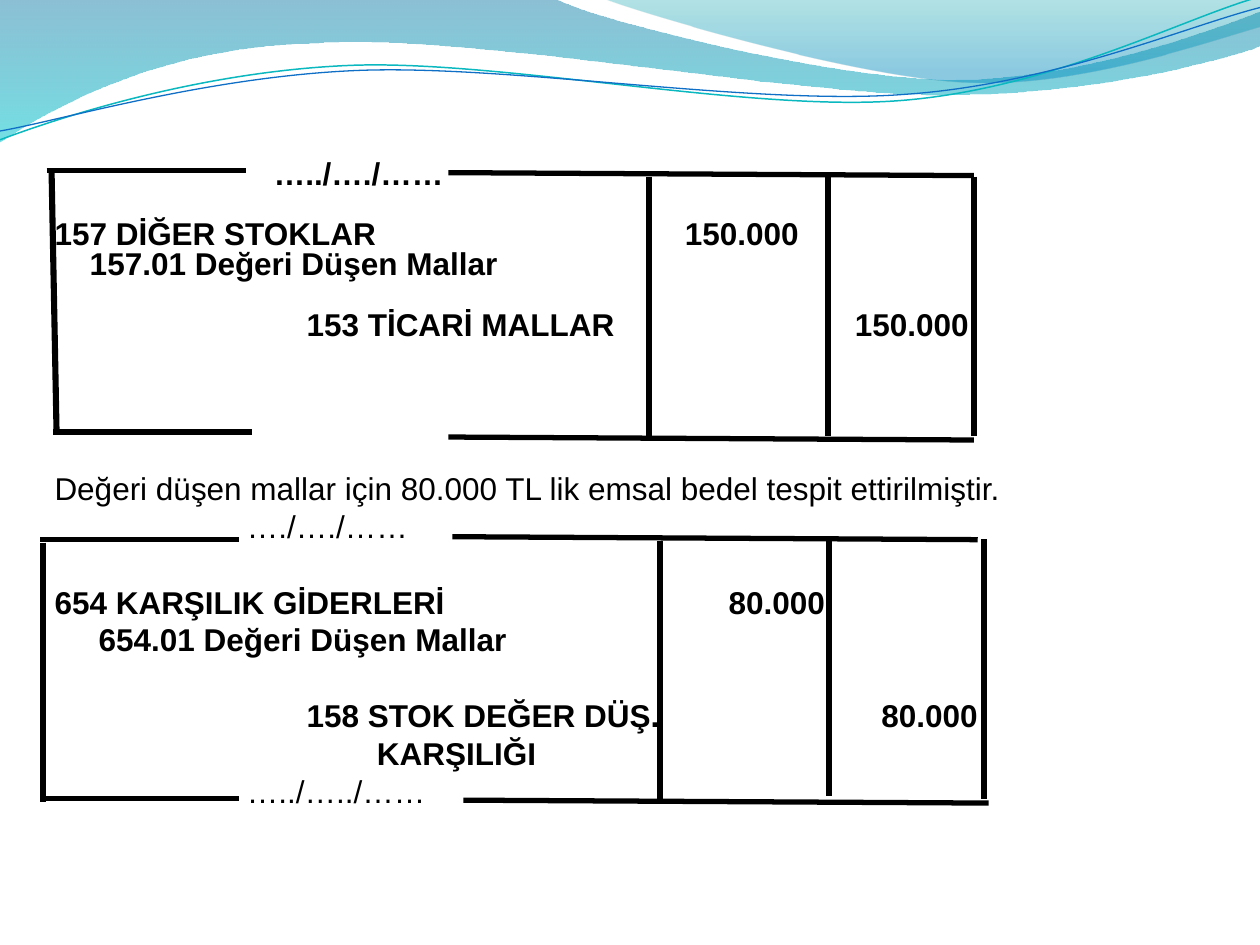
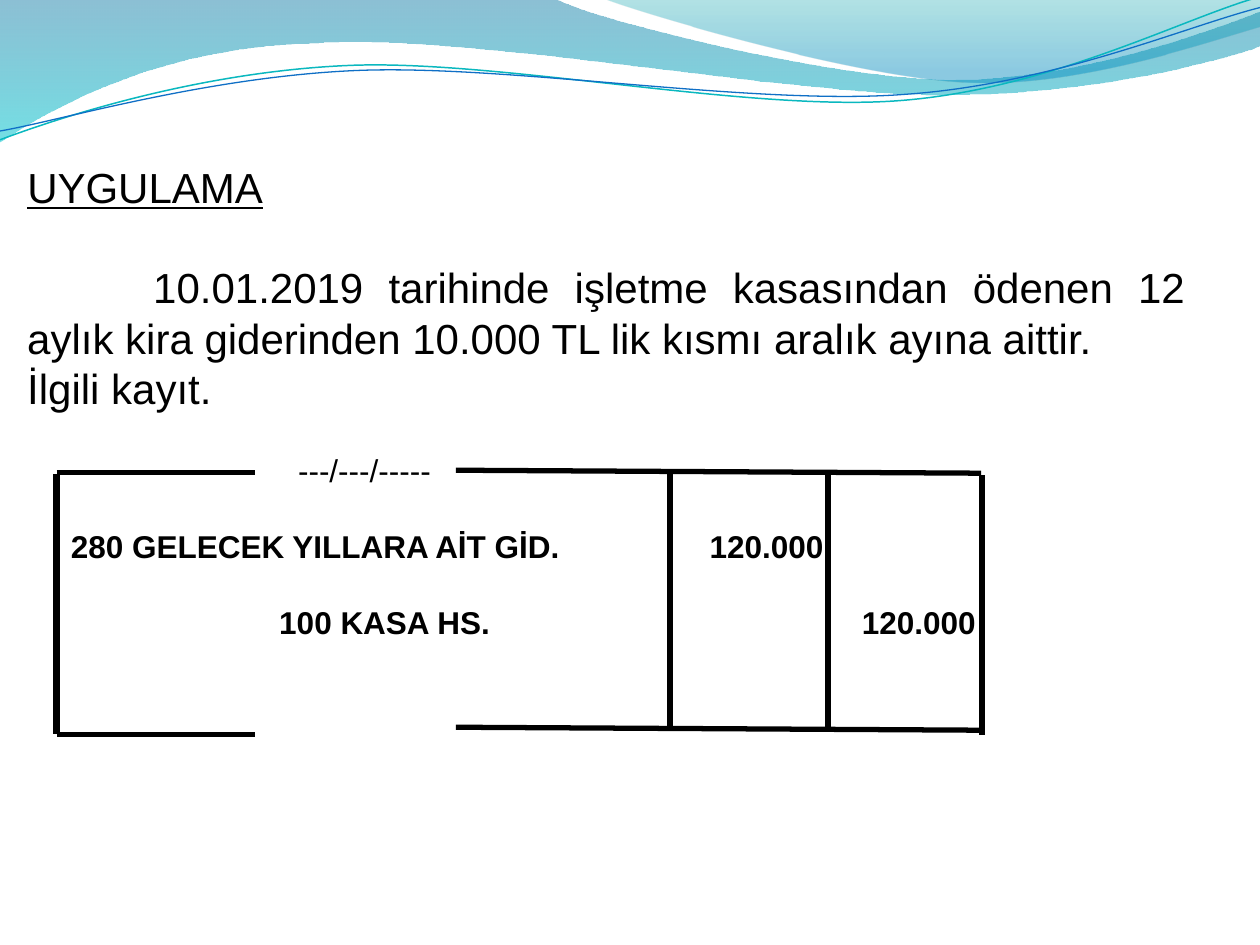
from dataclasses import dataclass

from lxml.etree import SubElement as add_child
from pptx import Presentation
from pptx.dml.color import RGBColor
from pptx.enum.shapes import MSO_CONNECTOR as Connector
from pptx.enum.text import MSO_ANCHOR as Anchor, PP_ALIGN as Align
from pptx.oxml.ns import qn
from pptx.util import Cm, Pt


@dataclass(frozen=True)
class Theme:
    """Colours, font, type sizes and line widths of the deck."""
    font: str = "Arial"
    ink: str = "000000"
    teal_line: str = "0AB8BF"
    blue_line: str = "0F6FC6"
    entry_size: float = 18
    reading_size: float = 24
    entry_leading: float = 21.65
    tight_leading: float = 17.3
    reading_leading: float = 28.8
    horizontal_rule: float = 3
    vertical_rule: float = 3.5


@dataclass(frozen=True)
class Row:
    """One journal line; an amount ends at the given right edge."""
    label: str
    indent: float = 0
    gap_before: bool = False
    amount: str = ""
    amount_right: float = 0
    bold: bool = True


@dataclass(frozen=True)
class Ruling:
    """Starting points of journal rules, in centimetres from the corner."""
    corner: tuple
    stubs: tuple
    leads: tuple
    posts: tuple
    left_lean: float = 0


THEME = Theme()
INCH = 2.54
STUB_WIDTH = 4.01
LEAD_WIDTH = 10.59
LEAD_SLANT = 0.06
POST_HEIGHT = 5.23

BANDS = (
    ((0, 0),
     [[(4.4, -0.01)],
      [(4.76, 0.17), (6.64, 0.63), (7.58, 0.63)],
      [(8.53, 0.63), (9.58, 0.26), (10, 0.09)],
      [(10.01, 0.36)],
      [(9.83, 0.44), (8.7, 0.76), (7.46, 0.75)],
      [(6.22, 0.75), (3.82, 0.28), (2.57, 0.34)],
      [(1.29, 0.36), (0.46, 0.83), (-0.01, 1.13)]],
     ((0, "0074A1", 45), (100, "00C6CF", 55))),
    ((4.79, -0.01),
     [[(5.09, 0.11), (6.82, 0.62), (7.69, 0.65)],
      [(8.56, 0.69), (9.61, 0.32), (10, 0.21)],
      [(10, 0)]],
     ((0, "00A1A9", 30), (80, "008BBF", 45))),
)
WAVES = (
    ((0, 1.11),
     [[(0.48, 0.93), (1.58, 0.57), (2.77, 0.52)],
      [(3.95, 0.47), (5.93, 0.89), (7.13, 0.8)],
      [(8.33, 0.71), (9.38, 0.15), (9.98, -0.02)]],
     THEME.teal_line, 0.85),
    ((0, 1.04),
     [[(0.47, 0.96), (1.64, 0.61), (2.83, 0.56)],
      [(4.03, 0.51), (5.97, 0.84), (7.17, 0.75)],
      [(8.36, 0.67), (9.41, 0.21), (10, 0.06)]],
     THEME.blue_line, 0.75),
)

STOCK_RULING = Ruling(
    corner=(0.94, 3.43), left_lean=0.1,
    stubs=((0, 0), (0.13, 5.28)),
    leads=((8.1, 0.05), (8.1, 5.38)),
    posts=((0.1, 0.05), (12.14, 0.13), (15.75, 0.13), (18.69, 0.13)))
PROVISION_RULING = Ruling(
    corner=(0.81, 10.87),
    stubs=((0, 0), (0, 5.23)),
    leads=((8.31, -0.05), (8.53, 5.26)),
    posts=((0.05, 0.07), (12.5, 0.03), (15.9, -0.05), (19.02, 0)))
RENT_RULING = Ruling(
    corner=(1.14, 9.53),
    stubs=((0, 0), (0, 5.28)),
    leads=((8.05, -0.05), (8.05, 5.13)),
    posts=((0, 0.03), (12.36, -0.03), (15.56, 0), (18.66, 0.05)))

STOCK_ROWS = (
    Row("…../…./……", 4.42),
    Row("157 DİĞER STOKLAR", 0, True, "150.000", 15),
    Row("157.01 Değeri Düşen Mallar", 0.71),
    Row("153 TİCARİ MALLAR", 5.08, True, "150.000", 18.43),
)
PROVISION_ROWS = (
    Row("Değeri düşen mallar için 80.000 TL lik emsal bedel tespit ettirilmiştir.",
        bold=False),
    Row("…./…./……", 3.88, bold=False),
    Row("654 KARŞILIK GİDERLERİ", 0, True, "80.000", 15.53),
    Row("654.01 Değeri Düşen Mallar", 0.89),
    Row("158 STOK DEĞER DÜŞ.", 5.08, True, "80.000", 18.61),
    Row("KARŞILIĞI", 6.5),
    Row("…../…../……", 3.88, bold=False),
)
RENT_ROWS = (
    Row("---/---/-----", 5.46, True, bold=False),
    Row("280 GELECEK YILLARA AİT GİD.", 0.88, True, "120.000", 16.05),
    Row("100 KASA HS.", 5.08, True, "120.000", 19.12),
)


def add_curve(slide, start, segments, close):
    """Draw an unfilled outline; three-point segments become cubic curves."""
    points = [(Cm(x * INCH), Cm(y * INCH))
              for x, y in (start, *(point for segment in segments for point in segment))]
    builder = slide.shapes.build_freeform(*points[0])
    builder.add_line_segments(points[1:], close=close)
    shape = builder.convert_to_shape()
    shape.shadow.inherit = False
    shape.fill.background()
    steps = iter(list(shape.element.iter(qn("a:lnTo"))))
    for segment in segments:
        first, *others = [next(steps) for _ in segment]
        if others:
            first.tag = qn("a:cubicBezTo")
        for step in others:
            first.append(step[0])
            step.getparent().remove(step)
    return shape


def set_gradient(shape, stops):
    """Give a shape a downward gradient of (position, colour, opacity) stops."""
    properties = shape.element.spPr
    empty_fill = properties.find(qn("a:noFill"))
    gradient = properties.makeelement(qn("a:gradFill"), {"rotWithShape": "1"})
    stop_list = add_child(gradient, qn("a:gsLst"))
    for position, color, opacity in stops:
        stop = add_child(stop_list, qn("a:gs"), pos=str(position * 1000))
        fill = add_child(stop, qn("a:srgbClr"), val=color)
        add_child(fill, qn("a:alpha"), val=str(opacity * 1000))
    add_child(gradient, qn("a:lin"), ang="5400000", scaled="0")
    properties.replace(empty_fill, gradient)


def add_master_waves(presentation, slide):
    """Draw the header waves and move them to the back of the slide master."""
    shapes = []
    for start, segments, stops in BANDS:
        band = add_curve(slide, start, segments, True)
        set_gradient(band, stops)
        band.line.fill.background()
        shapes.append(band)
    for start, segments, color, width in WAVES:
        wave = add_curve(slide, start, segments, False)
        wave.line.color.rgb = RGBColor.from_string(color)
        wave.line.width = Pt(width)
        shapes.append(wave)
    tree = presentation.slide_master.shapes.element
    for index, shape in enumerate(shapes):
        shape.element.nvSpPr.cNvPr.set("id", str(100 + index))
        tree.insert(2 + index, shape.element)


def add_rule(slide, start, run, rise, width):
    """Draw a black line from a point, both in centimetres."""
    x, y = start
    rule = slide.shapes.add_connector(
        Connector.STRAIGHT, Cm(x), Cm(y), Cm(x + run), Cm(y + rise))
    rule.line.color.rgb = RGBColor.from_string(THEME.ink)
    rule.line.width = Pt(width)
    add_child(rule.element.spPr, qn("a:effectLst"))


def add_ruling(slide, ruling):
    """Draw the broken top and bottom rules and the column rules of a journal."""
    left, top = ruling.corner
    for x, y in ruling.stubs:
        add_rule(slide, (left + x, top + y), STUB_WIDTH, 0, THEME.horizontal_rule)
    for x, y in ruling.leads:
        add_rule(slide, (left + x, top + y), LEAD_WIDTH, LEAD_SLANT,
                 THEME.horizontal_rule)
    leans = (ruling.left_lean, 0, 0, 0)
    for (x, y), lean in zip(ruling.posts, leans):
        add_rule(slide, (left + x, top + y), lean, POST_HEIGHT, THEME.vertical_rule)


def prepare_frame(frame):
    """Remove the insets of a text frame and anchor it at the top."""
    frame.word_wrap = True
    frame.vertical_anchor = Anchor.TOP
    frame.margin_left = frame.margin_right = frame.margin_top = frame.margin_bottom = 0
    return frame


def add_text_frame(slide, box):
    """Add a text box at a box in centimetres and return its frame."""
    return prepare_frame(slide.shapes.add_textbox(*map(Cm, box)).text_frame)


def write(paragraph, text, size, leading, bold=False, underline=False):
    """Add one styled run and set the line height of its paragraph."""
    paragraph.line_spacing = Pt(leading)
    run = paragraph.add_run()
    run.text = text
    run.font.name = THEME.font
    run.font.size = Pt(size)
    run.font.bold = bold
    run.font.underline = underline
    run.font.color.rgb = RGBColor.from_string(THEME.ink)


def set_tabs(paragraph, stops):
    """Set the (position, alignment) tab stops of a paragraph."""
    tab_list = add_child(paragraph._p.get_or_add_pPr(), qn("a:tabLst"))
    for position, alignment in stops:
        add_child(tab_list, qn("a:tab"), pos=str(int(Cm(position))), algn=alignment)


def write_rows(frame, rows, leading):
    """Append journal rows with tabbed labels and amounts to a text frame."""
    for row in rows:
        last = frame.paragraphs[-1]
        paragraph = frame.add_paragraph() if last.runs else last
        text, stops = row.label, []
        if row.indent:
            text = "\t" + text
            stops.append((row.indent, "l"))
        if row.amount:
            text += "\t" + row.amount
            stops.append((row.amount_right, "r"))
        paragraph.space_before = Pt(leading if row.gap_before else 0)
        write(paragraph, text, THEME.entry_size, leading, row.bold)
        if stops:
            set_tabs(paragraph, stops)


def build_stock_slide(slide):
    """Fill the slide with the write-down and provision journals."""
    provision = add_text_frame(slide, (1.1, 9.45, 23, 6.88))
    write_rows(provision, PROVISION_ROWS, THEME.entry_leading)
    stock = add_text_frame(slide, (1.1, 3.25, 18.6, 3.66))
    write_rows(stock, STOCK_ROWS, THEME.tight_leading)
    add_ruling(slide, STOCK_RULING)
    add_ruling(slide, PROVISION_RULING)


def build_exercise_slide(slide):
    """Fill the slide with the exercise title, its question and the journal."""
    title = slide.shapes.title
    title.left, title.top, title.width, title.height = map(Cm, (0.55, 3.25, 23.34, 1.02))
    heading = prepare_frame(title.text_frame).paragraphs[0]
    heading.alignment = Align.LEFT
    write(heading, "UYGULAMA", THEME.reading_size, THEME.reading_leading, underline=True)

    exercise = add_text_frame(slide, (0.55, 5.28, 23.34, 7.62))
    story = exercise.paragraphs[0]
    story.alignment = Align.JUSTIFY
    story._p.get_or_add_pPr().set("indent", str(int(Cm(INCH))))
    write(story, "10.01.2019 tarihinde işletme kasasından ödenen 12 aylık kira "
                 "giderinden 10.000 TL lik kısmı aralık ayına aittir.",
          THEME.reading_size, THEME.reading_leading)
    write(exercise.add_paragraph(), "İlgili kayıt.",
          THEME.reading_size, THEME.reading_leading)
    write_rows(exercise, RENT_ROWS, THEME.entry_leading)
    add_ruling(slide, RENT_RULING)


def main():
    """Build and save the presentation."""
    presentation = Presentation()
    presentation.slide_width, presentation.slide_height = Cm(25.4), Cm(19.05)
    title_only, blank = presentation.slide_layouts[5], presentation.slide_layouts[6]
    stock_slide = presentation.slides.add_slide(blank)
    add_master_waves(presentation, stock_slide)
    build_stock_slide(stock_slide)
    build_exercise_slide(presentation.slides.add_slide(title_only))
    presentation.save("out.pptx")


if __name__ == "__main__":
    main()
